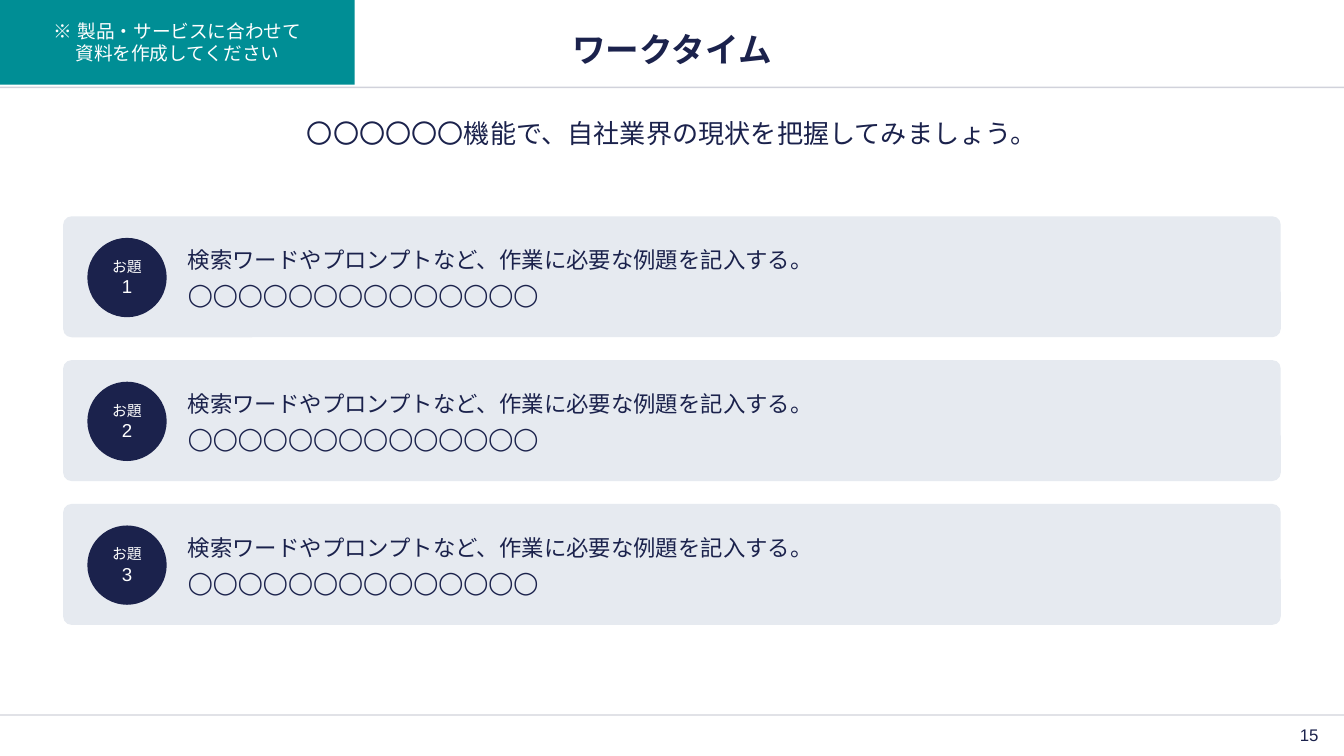
from lxml import etree
from pptx import Presentation
from pptx.dml.color import RGBColor
from pptx.enum.shapes import MSO_CONNECTOR, MSO_SHAPE
from pptx.enum.text import MSO_ANCHOR, MSO_AUTO_SIZE, PP_ALIGN
from pptx.oxml.ns import qn
from pptx.util import Inches, Pt

LEFT, CENTER, RIGHT = PP_ALIGN.LEFT, PP_ALIGN.CENTER, PP_ALIGN.RIGHT
TOP, MIDDLE = MSO_ANCHOR.TOP, MSO_ANCHOR.MIDDLE
RECT, ROUNDED, OVAL = MSO_SHAPE.RECTANGLE, MSO_SHAPE.ROUNDED_RECTANGLE, MSO_SHAPE.OVAL

COLORS = {"navy": "1B224C", "pale": "E6EAF0", "teal": "008E95", "white": "FFFFFF"}
FONT = "Arial"
SLIDE_W = 10
SLIDE_H = SLIDE_W * 9 / 16
MARGIN, CONTENT_W = 0.47, 9.06
INSET = 0.04

# Task cards
CARD_TOP, CARD_H, CARD_PITCH = 1.61, 0.9, 1.07
BADGE_LEFT, BADGE_DROP, BADGE_SIZE = 0.65, 0.16, 0.59
TASK_LINES = ["検索ワードやプロンプトなど、作業に必要な例題を記入する。", "◯" * 14]


def color(name):
    return RGBColor.from_string(COLORS[name])


def write(frame, lines, sizes, ink="navy", align=CENTER, anchor=MIDDLE,
          insets=(INSET,) * 4, gap=0, bold=False):
    """Fill a text frame, one paragraph per line, with one size per line."""
    left, top, right, bottom = map(Inches, insets)
    frame_format = {"word_wrap": True, "auto_size": MSO_AUTO_SIZE.NONE,
                    "vertical_anchor": anchor, "margin_left": left,
                    "margin_top": top, "margin_right": right,
                    "margin_bottom": bottom}
    for name, value in frame_format.items():
        setattr(frame, name, value)
    for index, (line, size) in enumerate(zip(lines, sizes)):
        paragraph = frame.paragraphs[0] if index == 0 else frame.add_paragraph()
        paragraph.alignment = align
        paragraph.space_before = Pt(gap if index else 0)
        run = paragraph.add_run()
        run.text = line
        font_format = {"name": FONT, "size": Pt(size), "bold": bold}
        for name, value in font_format.items():
            setattr(run.font, name, value)
        run.font.color.rgb = color(ink)
        # Japanese characters take their font from a:ea
        etree.SubElement(run._r.rPr, qn("a:ea"), typeface=FONT)


def add_rule(slide, y):
    rule = slide.shapes.add_connector(
        MSO_CONNECTOR.STRAIGHT, 0, Inches(y), Inches(SLIDE_W), Inches(y))
    rule.line.width = Pt(0.75)
    rule.line.color.rgb = color("navy")
    properties = rule._element.spPr
    rgb = properties.find(".//" + qn("a:srgbClr"))
    etree.SubElement(rgb, qn("a:alpha"), val="20000")
    etree.SubElement(properties, qn("a:effectLst"))


def add_title(slide, text):
    title = slide.shapes.title
    place = {"left": MARGIN, "top": 0.17, "width": CONTENT_W, "height": 0.39}
    for name, value in place.items():
        setattr(title, name, Inches(value))
    write(title.text_frame, [text], [18], bold=True)


def add_label(slide, box, text, size, **text_format):
    label = slide.shapes.add_textbox(*map(Inches, box))
    write(label.text_frame, [text], [size], **text_format)


def add_panel(slide, kind, box, fill, lines, sizes, **text_format):
    panel = slide.shapes.add_shape(kind, *map(Inches, box))
    panel.shadow.inherit = False
    panel.fill.solid()
    panel.fill.fore_color.rgb = color(fill)
    panel.line.fill.background()
    write(panel.text_frame, lines, sizes, **text_format)
    return panel


def add_task(slide, number):
    top = CARD_TOP + (number - 1) * CARD_PITCH
    card = add_panel(slide, ROUNDED, (MARGIN, top, CONTENT_W, CARD_H), "pale",
                     TASK_LINES, [12, 12], align=LEFT, gap=4,
                     insets=(0.91, 0.08, 0.08, 0.08))
    card.adjustments[0] = 0.07
    add_panel(slide, OVAL, (BADGE_LEFT, top + BADGE_DROP, BADGE_SIZE, BADGE_SIZE),
              "navy", ["お題", str(number)], [8, 10], ink="white", insets=(0,) * 4)


def main():
    deck = Presentation()
    deck.slide_width, deck.slide_height = Inches(SLIDE_W), Inches(SLIDE_H)
    slide = deck.slides.add_slide(deck.slide_layouts[5])

    # Header and footer rules
    for y in (0.65, 5.32):
        add_rule(slide, y)

    # Title, lead sentence and page number
    add_title(slide, "ワークタイム")
    add_label(slide, (MARGIN, 0.83, CONTENT_W, 0.63),
              "〇〇〇〇〇〇機能で、自社業界の現状を把握してみましょう。", 14, anchor=TOP)
    add_label(slide, (9.46, 5.37, 0.39, 0.2), "15", 9, align=RIGHT)

    # Tasks
    for number in range(1, 4):
        add_task(slide, number)

    # Corner note
    add_panel(slide, RECT, (0, 0, 2.64, 0.63), "teal",
              ["※ 製品・サービスに合わせて", "資料を作成してください"], [10, 10], ink="white")

    deck.save("out.pptx")


if __name__ == "__main__":
    main()
